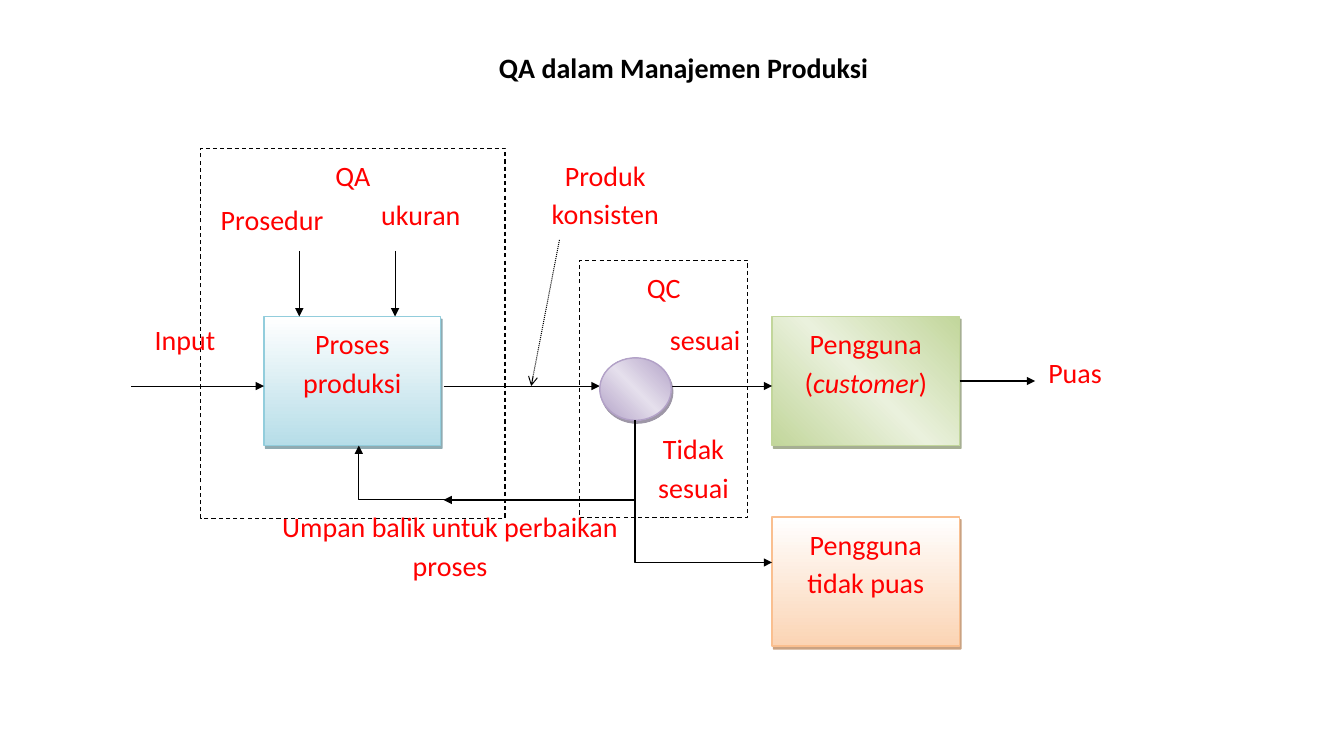
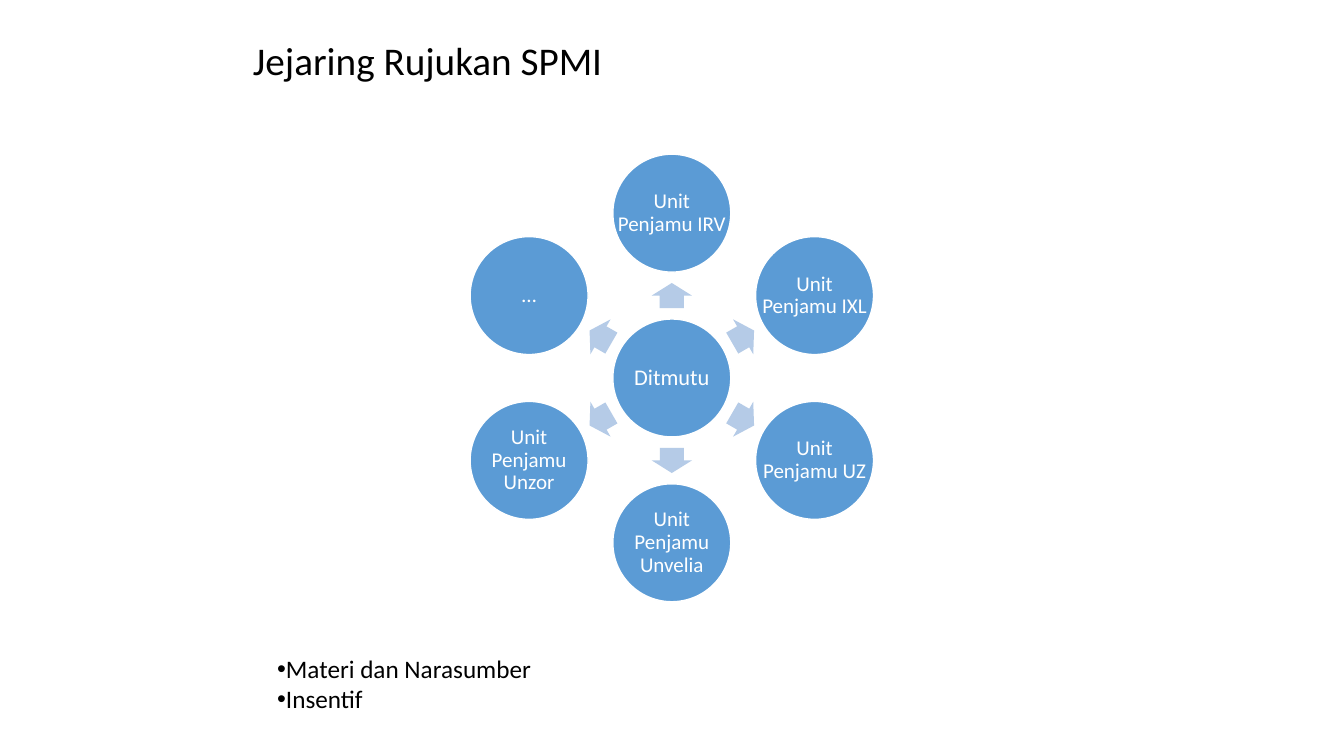
import math
from dataclasses import dataclass

import lxml.etree
import pptx
import pptx.dml.color
import pptx.enum.dml
import pptx.enum.shapes
import pptx.enum.text
import pptx.oxml.ns
import pptx.util

SHAPE = pptx.enum.shapes.MSO_SHAPE
DASH = pptx.enum.dml.MSO_LINE
ALIGN = pptx.enum.text.PP_ALIGN
ANCHOR = pptx.enum.text.MSO_ANCHOR
FIT = pptx.enum.text.MSO_AUTO_SIZE
Pt = pptx.util.Pt
qn = pptx.oxml.ns.qn


@dataclass(frozen=True)
class Theme:
    font: str = "Calibri"
    ink: str = "000000"
    red: str = "FF0000"
    white: str = "FFFFFF"
    disc: str = "5B9BD5"
    arrow: str = "B5CBE7"
    head: int = 28
    label: int = 20
    item: int = 18
    hub: int = 16
    node: int = 15
    thin: float = 0.75


@dataclass(frozen=True)
class Box:
    """A region on a grid whose columns and rows are a tenth of an inch."""
    x: float
    y: float
    w: float = 0
    h: float = 0

    def spot(self, x, y):
        return tuple(pptx.util.Inches(v / 10) for v in (self.x + x, self.y + y))

    def area(self, x, y, w, h):
        return self.spot(x, y) + tuple(pptx.util.Inches(v / 10) for v in (w, h))


T = Theme()
PAGE = Box(0, 0, 133.33, 75)
# Gradient stops, clockwise angle, edge and shadow colours
TEAL = ((0, "FFFFFF"), (100, "B6DDE8")), 90, "92CDDC", "205867"
GREEN = ((0, "C2D69B"), (50, "EAF1DD"), (100, "C2D69B")), 315, "C2D69B", "4E6128"
PEACH = ((0, "FFFFFF"), (100, "FBD4B4")), 90, "FABF8F", "974706"
PLUM = ((0, "B2A1C7"), (50, "E5DFEC"), (100, "B2A1C7")), 315, "B2A1C7", "3F3151"


def put(item, **form):
    for name, value in form.items():
        setattr(item, name, value)


def rgb(code):
    return pptx.dml.color.RGBColor.from_string(code)


def node(root, tag, **attrs):
    return lxml.etree.SubElement(
        root, qn(tag), {key: str(value) for key, value in attrs.items()})


def write(shape, texts, size, color, bold=False, inset=None,
          anchor=ANCHOR.TOP, wrap=True, **form):
    """Set one paragraph per text; words between asterisks are italic."""
    frame = shape.text_frame
    put(frame, word_wrap=wrap, vertical_anchor=anchor, auto_size=FIT.NONE)
    if inset is not None:
        sides = ("left", "right", "top", "bottom")
        put(frame, **{f"margin_{side}": pptx.util.Inches(inset) for side in sides})
    for i, text in enumerate(texts):
        para = frame.add_paragraph() if i else frame.paragraphs[0]
        put(para, **form)
        for j, part in enumerate(text.split("*")):
            run = para.add_run()
            run.text = part
            put(run.font, name=T.font, size=Pt(size), bold=bold, italic=j % 2 == 1)
            run.font.color.rgb = rgb(color)


def label(slide, area, text, size=T.label, color=T.red, space=1.15, **form):
    box = slide.shapes.add_textbox(*area)
    write(box, [text], size, color, alignment=ALIGN.CENTER, line_spacing=space, **form)


def title(slide, area, text, size, bold=False, space=0.9):
    head = slide.shapes.title
    put(head, **dict(zip(("left", "top", "width", "height"), area)))
    write(head, [text], size, T.ink, bold, alignment=ALIGN.LEFT, line_spacing=space)


def solid(slide, kind, area, fill=None, edge=None, width=1):
    shape = slide.shapes.add_shape(kind, *area)
    shape.shadow.inherit = False
    if fill:
        shape.fill.solid()
        shape.fill.fore_color.rgb = rgb(fill)
    else:
        shape.fill.background()
    if edge:
        shape.line.color.rgb = rgb(edge)
        shape.line.width = Pt(width)
    else:
        shape.line.fill.background()
    return shape


def glossy(slide, kind, area, look):
    """Add a shape with a gradient and a narrow shadow."""
    stops, angle, edge, shade = look
    shape = solid(slide, kind, area, edge=edge)
    shape.fill.gradient()
    shape.fill.gradient_angle = 360 - angle
    props = shape.element.spPr
    ramp = props.find(".//" + qn("a:gsLst"))
    for stop in list(ramp):
        ramp.remove(stop)
    for at, code in stops:
        node(node(ramp, "a:gs", pos=at * 1000), "a:srgbClr", val=code)
    cast = node(props.find(qn("a:effectLst")), "a:outerShdw",
                dist=Pt(2.2), dir=63 * 60000, algn="ctr", rotWithShape=0)
    node(node(cast, "a:srgbClr", val=shade), "a:alpha", val=50000)
    return shape


def frame(slide, area, text, fill=None):
    shape = solid(slide, SHAPE.RECTANGLE, area, fill, T.ink, T.thin)
    shape.line.dash_style = DASH.DASH
    write(shape, [text], T.label, T.red, alignment=ALIGN.CENTER, line_spacing=1.15)


def tip(item, kind="triangle"):
    item.line.color.rgb = rgb(T.ink)
    item.line.width = Pt(T.thin)
    node(item.element.spPr.find(qn("a:ln")), "a:tailEnd", type=kind)


def arrow(slide, start, end, kind="triangle"):
    line = slide.shapes.add_connector(
        pptx.enum.shapes.MSO_CONNECTOR.STRAIGHT, *start, *end)
    tip(line, kind)
    node(line.element.spPr, "a:effectLst")
    return line


def elbow(slide, start, *rest):
    path = slide.shapes.build_freeform(*start)
    path.add_line_segments(rest, close=False)
    shape = path.convert_to_shape()
    shape.shadow.inherit = False
    shape.fill.background()
    tip(shape)


def flow(slide, box):
    """Draw the production flow with its checks and feedback."""
    frame(slide, box.area(9.9, 4.7, 30.2, 36.7), "QA")
    frame(slide, box.area(47.5, 15.8, 16.7, 25.5), "QC", T.white)
    cards = {}
    for text, x, y, w, look in (
        ("Proses produksi", 16.2, 21.4, 17.5, TEAL),
        ("Pengguna (*customer*)", 66.6, 21.4, 18.6, GREEN),
        ("Pengguna tidak puas", 66.6, 41.3, 18.6, PEACH),
    ):
        card = glossy(slide, SHAPE.RECTANGLE, box.area(x, y, w, 12.8), look)
        write(card, [text], T.label, T.red, alignment=ALIGN.CENTER, line_spacing=1.15)
        cards[text] = card

    for text, *area in (
        ("Umpan balik untuk perbaikan proses", 16.2, 39.6, 36.9, 11.5),
        ("Prosedur", 6.8, 9.1, 20.4, 7.9),
        ("ukuran", 23.5, 8.6, 16.5, 7.9),
        ("Produk konsisten", 41.3, 4.7, 17.5, 12.8),
        ("Puas", 88.9, 24.3, 15.5, 6.7),
        ("Input", 0.6, 21, 15.5, 7.3),
        ("sesuai", 52.2, 21, 15.5, 6.7),
    ):
        label(slide, box.area(*area), text)
    label(slide, box.area(51.8, 31, 14, 10.3), "Tidak sesuai", anchor=ANCHOR.MIDDLE)

    main = 28.3
    for left, right in ((3, 16.2), (34, 49.5), (56.6, 66.6)):
        arrow(slide, box.spot(left, main), box.spot(right, main))
    for x in (19.7, 29.2):
        arrow(slide, box.spot(x, 14.9), box.spot(x, 21.4))
    leave = arrow(slide, box.spot(85.2, 27.8), box.spot(92.7, 27.8))
    leave.begin_connect(cards["Pengguna (*customer*)"], 3)
    note = arrow(slide, box.spot(45.5, 13.8), box.spot(42.7, main), "arrow")
    note.line.dash_style = DASH.ROUND_DOT

    glossy(slide, SHAPE.OVAL, box.area(49.5, 25.5, 7.1, 6.2), PLUM)
    for points in (
        ((51.2, 39.6), (25.6, 39.6), (25.6, 34.2)),
        ((53, 31.7), (53, 39.6), (34, 39.6)),
        ((53, 31.7), (53, 45.8), (66.6, 45.8)),
    ):
        elbow(slide, *(box.spot(*point) for point in points))


def wheel(slide, box, hub, names):
    """Set names on a ring, clockwise from the top, with arrows from the hub."""
    disc, long, wide = 11.7, 2.5, 4
    ring = (box.h - disc) / 2

    def place(reach, turn, w, h):
        x = box.w / 2 + reach * math.cos(turn)
        y = box.h / 2 + reach * math.sin(turn)
        return box.area(x - w / 2, y - h / 2, w, h)

    def circle(reach, turn, text, size):
        area = place(reach, turn, disc, disc)
        solid(slide, SHAPE.OVAL, area, T.disc, T.white)
        label(slide, area, text, size, T.white, 0.9, inset=0.02, anchor=ANCHOR.MIDDLE)

    circle(0, 0, hub, T.hub)
    for i, name in enumerate(names):
        angle = 360 * i / len(names) - 90
        turn = math.radians(angle)
        spoke = solid(slide, SHAPE.RIGHT_ARROW, place(ring / 2, turn, long, wide), T.arrow)
        spoke.adjustments[0] = 0.6
        spoke.rotation = angle % 360
        circle(ring, turn, name, T.node)


def points(slide, area, texts):
    body = slide.placeholders[1]
    put(body, **dict(zip(("left", "top", "width", "height"), area)))
    write(body, texts, T.item, T.ink, wrap=False, alignment=ALIGN.LEFT,
          line_spacing=1.0, space_before=Pt(0))
    for para in body.text_frame.paragraphs:
        props = para._p.get_or_add_pPr()
        props.set("marL", "0")
        props.set("indent", "0")
        node(props, "a:buFont", typeface="Arial")
        node(props, "a:buChar", char="•")


def main():
    deck = pptx.Presentation()
    put(deck, slide_width=pptx.util.Inches(PAGE.w / 10),
        slide_height=pptx.util.Inches(PAGE.h / 10))

    slide = deck.slides.add_slide(deck.slide_layouts[5])
    title(slide, PAGE.area(48.5, 4.5, 39, 4.4), "QA dalam Manajemen Produksi",
          T.label, True, 1.0)
    flow(slide, Box(10, 10))

    slide = deck.slides.add_slide(deck.slide_layouts[1])
    title(slide, PAGE.area(24.1, 3.6, 90, 9.8), "Jejaring Rujukan SPMI", T.head)
    wheel(slide, Box(46.7, 15.3, 39.9, 44.4), "Ditmutu", (
        "Unit Penjamu IRV", "Unit Penjamu IXL", "Unit Penjamu UZ",
        "Unit Penjamu Unvelia", "Unit Penjamu Unzor", "…"))
    points(slide, PAGE.area(26.5, 64.3, 27.5, 7.1), ("Materi dan Narasumber", "Insentif"))

    deck.save("out.pptx")


if __name__ == "__main__":
    main()
